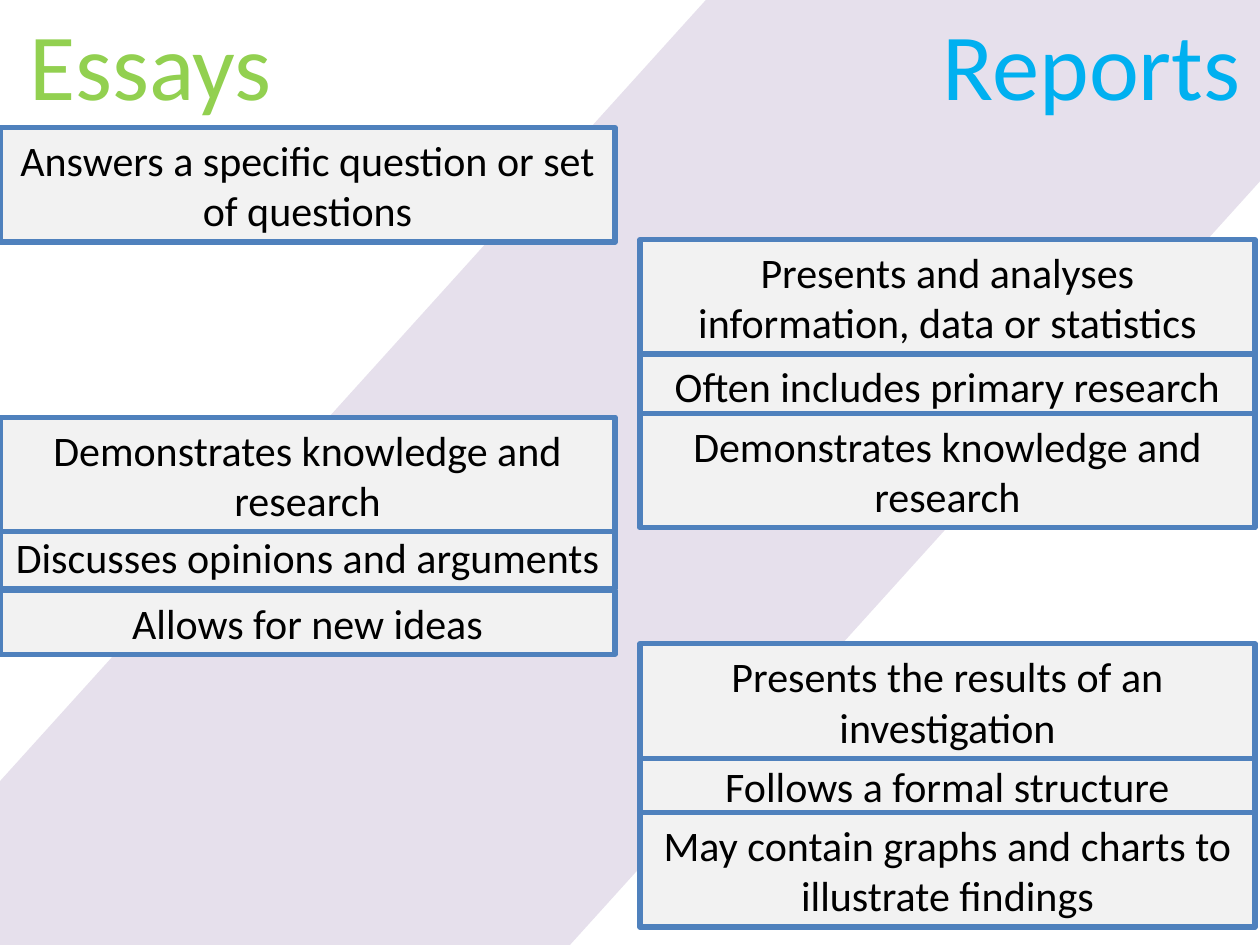
from pptx import Presentation
from pptx.dml.color import RGBColor
from pptx.enum.shapes import MSO_SHAPE
from pptx.enum.text import MSO_ANCHOR, MSO_AUTO_SIZE, PP_ALIGN
from pptx.util import Cm, Pt

LILAC = RGBColor(0xE6, 0xE0, 0xEC)
GREEN = RGBColor(0x92, 0xD0, 0x50)
CYAN = RGBColor(0x00, 0xB0, 0xF0)
GREY = RGBColor(0xF2, 0xF2, 0xF2)
BLUE = RGBColor(0x4F, 0x81, 0xBD)
BLACK = RGBColor(0x00, 0x00, 0x00)

ESSAYS, REPORTS = 0, 12.9
ONE_LINE, TWO_LINES = 1.28, 2.31


def write(tf, text, size, color):
    tf.auto_size = MSO_AUTO_SIZE.SHAPE_TO_FIT_TEXT
    p = tf.paragraphs[0]
    p.alignment = PP_ALIGN.CENTER
    r = p.add_run()
    r.text = text
    r.font.name = "Calibri"
    r.font.size = Pt(size)
    r.font.color.rgb = color


prs = Presentation()
prs.slide_width, prs.slide_height = Cm(25.4), Cm(19.05)
s = prs.slides.add_slide(prs.slide_layouts[6])

band = s.shapes.add_shape(MSO_SHAPE.RECTANGLE, Cm(-3.23), Cm(4.11), Cm(32.26), Cm(10.74))
band.rotation = 312.1
band.shadow.inherit = False
band.fill.solid()
band.fill.fore_color.rgb = LILAC
band.line.fill.background()

headings = [("Essays", 0.3, 5.46, GREEN), ("Reports", 18.72, 6.58, CYAN)]
for text, left, width, color in headings:
    sp = s.shapes.add_textbox(Cm(left), Cm(0), Cm(width), Cm(2.57))
    sp.text_frame.word_wrap = False
    write(sp.text_frame, text, 54, color)

boxes = [
    (ESSAYS, 2.57, TWO_LINES, "Answers a specific question or set of questions"),
    (REPORTS, 4.83, TWO_LINES, "Presents and analyses information, data or statistics"),
    (REPORTS, 7.14, ONE_LINE, "Often includes primary research"),
    (ESSAYS, 10.59, ONE_LINE, "Discusses opinions and arguments"),
    (ESSAYS, 11.91, ONE_LINE, "Allows for new ideas"),
    (REPORTS, 15.19, ONE_LINE, "Follows a formal structure"),
    (REPORTS, 8.33, TWO_LINES, "Demonstrates knowledge and research"),
    (REPORTS, 12.98, TWO_LINES, "Presents the results of an investigation"),
    (ESSAYS, 8.41, TWO_LINES, "Demonstrates knowledge and research"),
    (REPORTS, 16.38, TWO_LINES, "May contain graphs and charts to illustrate findings"),
]
for left, top, height, text in boxes:
    sp = s.shapes.add_shape(MSO_SHAPE.RECTANGLE, Cm(left), Cm(top), Cm(12.4), Cm(height))
    sp.shadow.inherit = False
    sp.fill.solid()
    sp.fill.fore_color.rgb = GREY
    sp.line.color.rgb = BLUE
    sp.line.width = Pt(3)
    tf = sp.text_frame
    tf.word_wrap = True
    tf.vertical_anchor = MSO_ANCHOR.MIDDLE
    write(tf, text, 24, BLACK)

prs.save("out.pptx")
